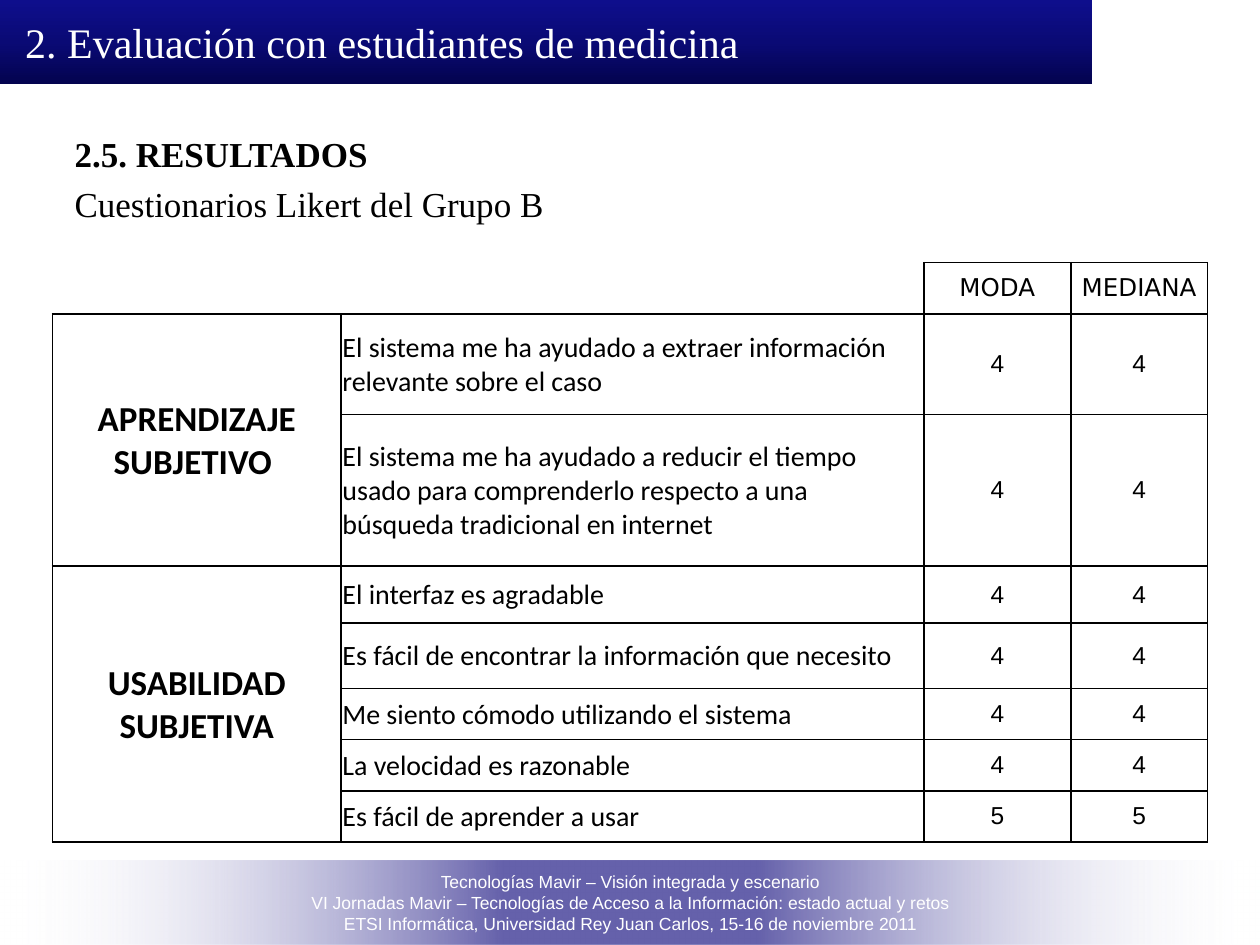
from lxml import etree
from pptx import Presentation
from pptx.dml.color import RGBColor
from pptx.enum.shapes import MSO_SHAPE
from pptx.enum.text import MSO_ANCHOR, MSO_AUTO_SIZE, PP_ALIGN
from pptx.oxml.ns import qn
from pptx.util import Pt

RECTANGLE = MSO_SHAPE.RECTANGLE
MIDDLE, TOP = MSO_ANCHOR.MIDDLE, MSO_ANCHOR.TOP
LEFT, CENTER = PP_ALIGN.LEFT, PP_ALIGN.CENTER
NO_FIT = MSO_AUTO_SIZE.NONE

COLORS = {
    "white": "FFFFFF",
    "black": "000000",
    "violet": "6561AB",
    "navy_dark": "03034F",
    "navy": "0A0A75",
    "navy_light": "0E0E8C",
}
SERIF, SANS, BODY, HEADING = "Times New Roman", "Arial", "Calibri", "DejaVu Sans"

TITLE = "2. Evaluación con estudiantes de medicina"
FOOTER = [
    "Tecnologías Mavir – Visión integrada y escenario",
    "VI Jornadas Mavir – Tecnologías de Acceso a la Información: estado actual y retos",
    "ETSI Informática, Universidad Rey Juan Carlos, 15-16 de noviembre 2011",
]
MEASURES = ["MODA", "MEDIANA"]
SURVEY = [
    ("APRENDIZAJE SUBJETIVO ", [
        ("El sistema me ha ayudado a extraer información relevante sobre el caso", 4, 4),
        ("El sistema me ha ayudado a reducir el tiempo usado para comprenderlo "
         "respecto a una búsqueda tradicional en internet", 4, 4),
    ]),
    ("USABILIDAD SUBJETIVA", [
        ("El interfaz es agradable", 4, 4),
        ("Es fácil de encontrar la información que necesito", 4, 4),
        ("Me siento cómodo utilizando el sistema", 4, 4),
        ("La velocidad es razonable", 4, 4),
        ("Es fácil de aprender a usar", 5, 5),
    ]),
]
COLUMN_WIDTHS = [165, 333, 84, 78]
ROW_HEIGHTS = [29.5, 57.5, 86.5, 32.5, 37.5, 29.25, 29.25, 29.25]
LABEL_INSETS = (0.75, 0.75, 0.75, 0)
VALUE_INSETS = (3.5, 0, 3.5, 0)


class SlideBuilder:
    def __init__(self, slide):
        self.slide = slide

    def gradient(self, shape, stops, angle):
        shape.fill.gradient()
        shape.fill.gradient_angle = angle
        stop_list = next(shape._element.spPr.iter(qn("a:gsLst")))
        for stop in list(stop_list):
            stop_list.remove(stop)
        for percent, color, opacity in stops:
            stop = etree.SubElement(stop_list, qn("a:gs"), pos=str(percent * 1000))
            tint = etree.SubElement(stop, qn("a:srgbClr"), val=COLORS[color])
            if opacity < 100:
                etree.SubElement(tint, qn("a:alpha"), val=str(opacity * 1000))

    def paragraph(self, paragraph, text, font, size, color="black", bold=False,
                  align=LEFT, hanging=0, before=0):
        paragraph.alignment = align
        paragraph.space_before = Pt(before)
        if hanging:
            properties = paragraph._p.get_or_add_pPr()
            properties.set("marL", str(Pt(hanging)))
            properties.set("indent", str(-Pt(hanging)))
            etree.SubElement(properties, qn("a:buNone"))
        run = paragraph.add_run()
        run.text = text
        run.font.name = font
        run.font.size = Pt(size)
        run.font.bold = bold
        run.font.color.rgb = RGBColor.from_string(COLORS[color])

    def title(self, text, box, stops, angle):
        title = self.slide.shapes.title
        title.left, title.top, title.width, title.height = map(Pt, box)
        self.gradient(title, stops, angle)
        frame = title.text_frame
        frame.auto_size = NO_FIT
        frame.vertical_anchor = MIDDLE
        frame.margin_left = frame.margin_right = Pt(14.4)
        self.paragraph(frame.paragraphs[0], text, SERIF, 24, "white", hanging=36)

    def band(self, box, stops, angle):
        band = self.slide.shapes.add_shape(RECTANGLE, *map(Pt, box))
        band.shadow.inherit = False
        band.line.fill.background()
        self.gradient(band, stops, angle)

    def text(self, box, lines, anchor=TOP, wrap=True, before=0, **style):
        frame = self.slide.shapes.add_textbox(*map(Pt, box)).text_frame
        frame.word_wrap = wrap
        frame.auto_size = NO_FIT
        frame.vertical_anchor = anchor
        for index, (line, bold) in enumerate(lines):
            paragraph = frame.add_paragraph() if index else frame.paragraphs[0]
            self.paragraph(paragraph, line, bold=bold,
                           before=before if index else 0, **style)

    def cell(self, cell, text="", insets=VALUE_INSETS, borders="LRTB", **style):
        cell.margin_left, cell.margin_top, cell.margin_right, cell.margin_bottom = map(Pt, insets)
        cell.vertical_anchor = MIDDLE
        properties = cell._tc.get_or_add_tcPr()
        for side in "LRTB":
            line = etree.SubElement(properties, qn("a:ln" + side), w=str(Pt(1)))
            if side in borders:
                fill = etree.SubElement(line, qn("a:solidFill"))
                etree.SubElement(fill, qn("a:srgbClr"), val=COLORS["black"])
            else:
                etree.SubElement(line, qn("a:noFill"))
        cell.fill.background()
        if text:
            self.paragraph(cell.text_frame.paragraphs[0], text, **style)

    def survey_table(self, left, top):
        table = self.slide.shapes.add_table(
            len(ROW_HEIGHTS), len(COLUMN_WIDTHS), Pt(left), Pt(top),
            Pt(sum(COLUMN_WIDTHS)), Pt(sum(ROW_HEIGHTS))).table
        table.first_row = table.horz_banding = False
        for column, width in zip(table.columns, COLUMN_WIDTHS):
            column.width = Pt(width)
        for row, height in zip(table.rows, ROW_HEIGHTS):
            row.height = Pt(height)

        self.cell(table.cell(0, 0), borders="B")
        self.cell(table.cell(0, 1), borders="RB")
        for column, measure in enumerate(MEASURES, 2):
            self.cell(table.cell(0, column), measure, font=HEADING, size=14, align=CENTER)

        first = 1
        for category, questions in SURVEY:
            last = first + len(questions) - 1
            table.cell(first, 0).merge(table.cell(last, 0))
            for row, (question, *scores) in enumerate(questions, first):
                self.cell(table.cell(row, 0), category if row == first else "",
                          LABEL_INSETS, font=BODY, size=20, bold=True, align=CENTER)
                self.cell(table.cell(row, 1), question, LABEL_INSETS, font=BODY, size=16)
                for column, score in enumerate(scores, 2):
                    self.cell(table.cell(row, column), str(score),
                              font=SANS, size=14, align=CENTER)
            first = last + 1


def main():
    presentation = Presentation()
    presentation.slide_width, presentation.slide_height = Pt(720), Pt(540)
    builder = SlideBuilder(presentation.slides.add_slide(presentation.slide_layouts[5]))

    builder.title(TITLE, (0, 0, 624, 48),
                  [(0, "navy_dark", 100), (50, "navy", 100), (100, "navy_light", 100)], 90)
    builder.band((0, 492, 720, 48),
                 [(0, "white", 0), (40, "violet", 100), (60, "violet", 100), (100, "white", 0)], 0)
    builder.text((168, 494, 384, 43), [(line, False) for line in FOOTER],
                 anchor=MIDDLE, wrap=False, font=SANS, size=10, color="white", align=CENTER)
    builder.survey_table(30, 150)
    builder.text((35.5, 72, 649, 394),
                 [("2.5. RESULTADOS", True), ("Cuestionarios Likert del Grupo B", False)],
                 before=5, font=SERIF, size=20, hanging=22.5)

    presentation.save("out.pptx")


if __name__ == "__main__":
    main()
